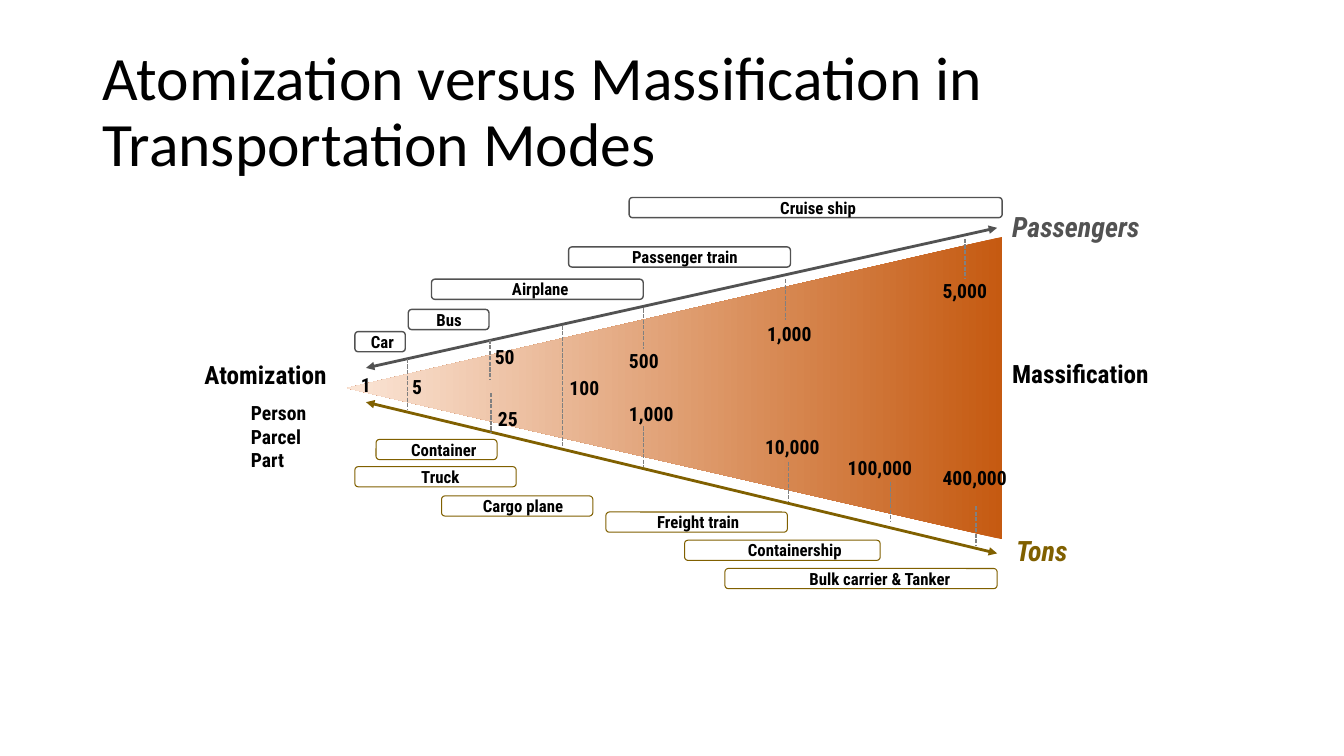
from lxml import etree
from pptx import Presentation
from pptx.dml.color import RGBColor
from pptx.enum.dml import MSO_LINE
from pptx.enum.shapes import MSO_CONNECTOR, MSO_SHAPE
from pptx.enum.text import MSO_ANCHOR
from pptx.oxml.ns import qn
from pptx.util import Inches, Pt

STRAIGHT = MSO_CONNECTOR.STRAIGHT
ROUNDED = MSO_SHAPE.ROUNDED_RECTANGLE
TRIANGLE = MSO_SHAPE.ISOSCELES_TRIANGLE
DASH = MSO_LINE.SQUARE_DOT
MIDDLE = MSO_ANCHOR.MIDDLE
TOP = MSO_ANCHOR.TOP

COLORS = {
    "black": "000000", "white": "FFFFFF", "passengers": "525252",
    "tons": "806000", "tick": "808080", "mass": "C55A11", "atom": "FBE5D6",
}
LABEL_FONT = "Roboto Condensed"
COLUMNS_PER_INCH = 10
BAR_ROWS = 2
MODE_ROWS = 3
VALUE_ROWS = 3.4
NAME_ROWS = 4.4

PASSENGERS = {
    "name": ("Passengers", 64.4, 1.3, 14.9),
    "color": "passengers",
    "bar_line": 1,
    "arrow": (1.3, 17.5, 63.9, 3.6),
    "modes": [
        ("Car", 0.2, 13.9, 5, 0.8, 4.8),
        ("Bus", 5.5, 11.7, 8, 7.3, 4.7),
        ("Airplane", 7.8, 8.7, 21, 14.8, 8.4),
        ("Passenger train", 21.4, 5.5, 22, 26.7, 13.2),
        ("Cruise ship", 27.4, 0.6, 37, 41.4, 10.2),
    ],
    "values": [
        ("1", -0.2, 17.5, 3), ("5", 4.9, 17.7, 3), ("50", 13.1, 14.7, 4),
        ("100", 20.5, 17.8, 5), ("500", 26.4, 15.1, 5),
        ("1,000", 40.1, 12.4, 6.4), ("5,000", 57.5, 8.2, 6.4),
    ],
    "ticks": [
        (5.4, 16.6, 5), (13.6, 14.7, 4), (20.8, 13.3, 12),
        (28.8, 11.6, 4), (42.9, 8.7, 4), (60.7, 4.7, 4),
    ],
}
TONS = {
    "name": ("Tons", 64.8, 13.4, 7.5),
    "color": "tons",
    "bar_line": 0.75,
    "arrow": (1.3, 0.9, 63.9, 15.9),
    "modes": [
        ("Container", 2.3, 4.6, 12, 4.8, 9.3),
        ("Truck", 0.2, 7.3, 16, 5.8, 6.4),
        ("Cargo plane", 8.8, 10.2, 15, 11.9, 10.9),
        ("Freight train", 25.1, 11.8, 18, 29.2, 11.3),
        ("Containership", 32.9, 14.6, 19.4, 38.2, 12.3),
        ("Bulk carrier & Tanker", 36.9, 17.4, 27, 44.3, 18.3),
    ],
    "values": [
        ("25", 13.4, 0.9, 4), ("1,000", 26.4, 0.4, 6.4),
        ("10,000", 39.9, 3.7, 7.4), ("100,000", 48.1, 5.7, 8.4),
        ("400,000", 57.5, 6.7, 8.4),
    ],
    "ticks": [
        (13.7, 0, 4), (28.8, 3.3, 4), (43.2, 6.8, 4),
        (53.3, 8.8, 4), (61.8, 11.2, 4),
    ],
}


def cells(*counts):
    """Turn grid columns or rows into slide lengths."""
    return [Inches(count / COLUMNS_PER_INCH) for count in counts]


def color(name):
    """Look up a named colour."""
    return RGBColor.from_string(COLORS[name])


def add_text(slide, box, lines, size, ink="black", font=LABEL_FONT,
             bold=True, italic=False, wrap=False, anchor=TOP, spacing=1):
    """Place lines of text in a box given in grid cells."""
    frame = slide.shapes.add_textbox(*cells(*box)).text_frame
    frame.word_wrap = wrap
    frame.vertical_anchor = anchor
    for index, line in enumerate(lines):
        para = frame.add_paragraph() if index else frame.paragraphs[0]
        para.line_spacing = spacing
        span = para.add_run()
        span.text = line
        span.font.name = font
        span.font.size = Pt(size)
        span.font.bold = bold
        span.font.italic = italic
        span.font.color.rgb = color(ink)


def add_line(slide, ends, ink, width):
    """Draw a straight line between two grid points."""
    line = slide.shapes.add_connector(STRAIGHT, *cells(*ends))
    line.line.color.rgb = color(ink)
    line.line.width = Pt(width)
    etree.SubElement(line._element.spPr, qn("a:effectLst"))
    return line


def add_arrow(slide, ends, ink):
    """Draw a line with an arrowhead at both ends."""
    outline = add_line(slide, ends, ink, 2).line._get_or_add_ln()
    for end in ("a:headEnd", "a:tailEnd"):
        etree.SubElement(outline, qn(end), type="triangle")


def add_title(slide, box):
    """Write the slide title."""
    add_text(slide, box, ["Atomization versus Massification in Transportation Modes"],
             44, font="Calibri", bold=False, wrap=True, anchor=MIDDLE, spacing=0.9)


def add_wedge(slide, box):
    """Draw the wedge opening rightwards and name its two ends."""
    left, top, width, height = box
    turn = (width - height) / 2
    wedge = slide.shapes.add_shape(
        TRIANGLE, *cells(left + turn, top - turn, height, width))
    wedge.rotation = 270
    wedge.shadow.inherit = False
    wedge.line.fill.background()
    wedge.fill.gradient()
    wedge.fill.gradient_angle = 90
    for stop, shade in zip(wedge.fill.gradient_stops, ("mass", "atom")):
        stop.color.rgb = color(shade)
    add_text(slide, (left - 15.1, top + 11.7, 15.3, 4), ["Atomization"], 18)
    add_text(slide, (left + width, top + 11.6, 16.5, 4), ["Massification"], 18)
    add_text(slide, (left - 10.5, top + 15.8, 7.8, 8.1),
             ["Person", "Parcel", "Part"], 14)


def add_scale(slide, box, scale):
    """Draw one traffic scale: modes, arrow, values, ticks and name."""
    left, top = box[:2]
    ink = scale["color"]
    for mode, x, y, width, label_x, label_width in scale["modes"]:
        bar = slide.shapes.add_shape(
            ROUNDED, *cells(left + x, top + y, width, BAR_ROWS))
        bar.shadow.inherit = False
        bar.fill.solid()
        bar.fill.fore_color.rgb = color("white")
        bar.line.color.rgb = color(ink)
        bar.line.width = Pt(scale["bar_line"])
        label_y = top + y - (MODE_ROWS - BAR_ROWS) / 2
        add_text(slide, (left + label_x, label_y, label_width, MODE_ROWS), [mode], 12)
    x1, y1, x2, y2 = scale["arrow"]
    add_arrow(slide, (left + x1, top + y1, left + x2, top + y2), ink)
    for value, x, y, width in scale["values"]:
        add_text(slide, (left + x, top + y, width, VALUE_ROWS), [value], 14)
    for x, y, length in scale["ticks"]:
        tick = add_line(
            slide, (left + x, top + y, left + x, top + y + length), "tick", 1)
        tick.line.dash_style = DASH
    name, x, y, width = scale["name"]
    add_text(slide, (left + x, top + y, width, NAME_ROWS), [name], 20, ink, italic=True)


def main():
    """Build the deck and save it."""
    deck = Presentation()
    deck.slide_width, deck.slide_height = Inches(13.33), Inches(7.5)
    page = deck.slides.add_slide(deck.slide_layouts[6])
    add_wedge(page, (34.4, 23.5, 65, 30))
    add_title(page, (9.2, 4, 115, 14.5))
    add_scale(page, (35, 19, 65, 20), PASSENGERS)
    add_scale(page, (35, 39, 65, 20), TONS)
    deck.save("out.pptx")


if __name__ == "__main__":
    main()
